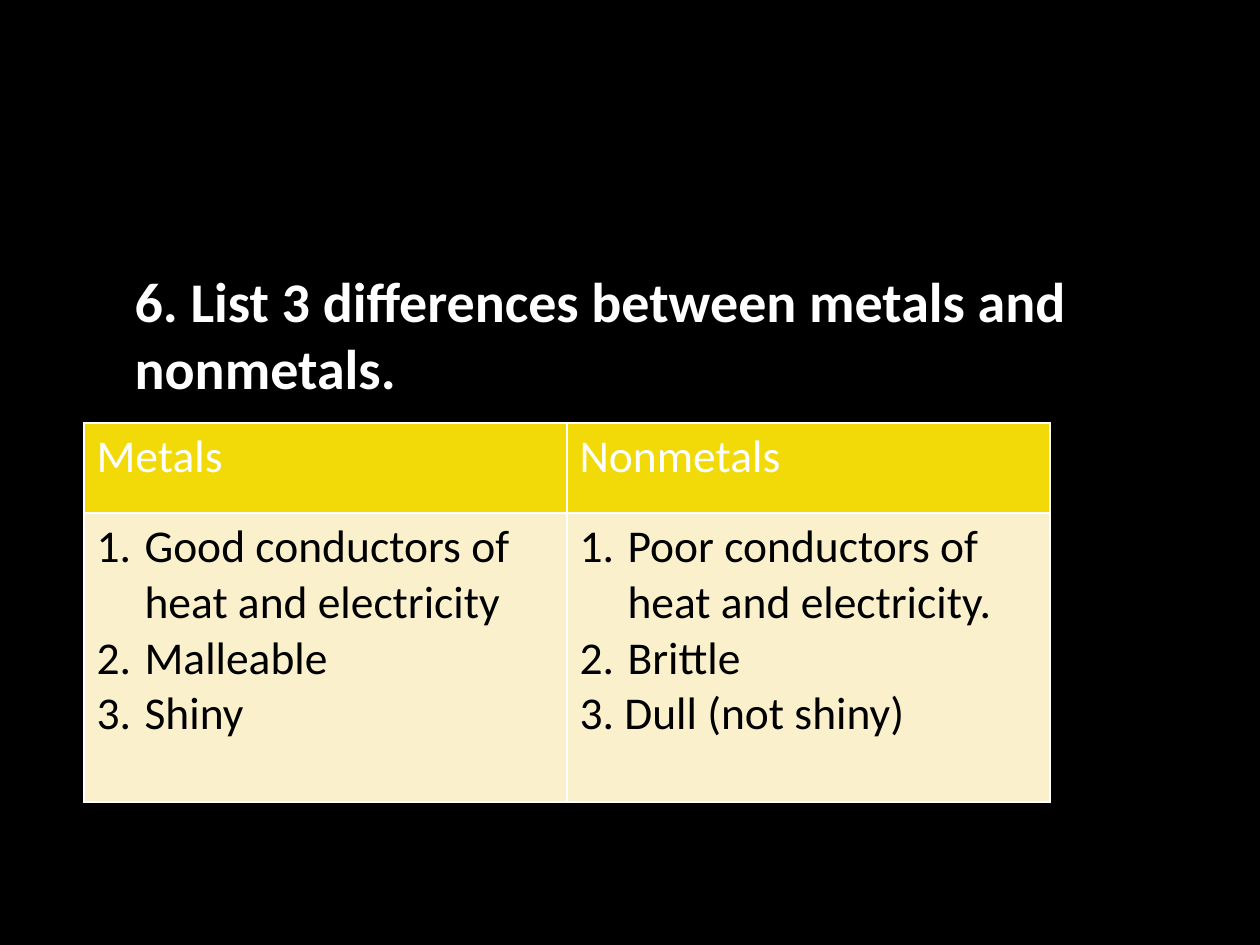
"""Build a slide comparing metals and nonmetals in a table."""
from pptx import Presentation
from pptx.dml.color import RGBColor
from pptx.enum.text import MSO_ANCHOR, MSO_AUTO_SIZE, PP_ALIGN
from pptx.oxml.ns import qn
from pptx.util import Pt
from lxml import etree

TOP, NO_FIT, LEFT = MSO_ANCHOR.TOP, MSO_AUTO_SIZE.NONE, PP_ALIGN.LEFT
PX = 914400 // 126
FONT = "Calibri"
WHITE, BLACK, YELLOW, CREAM = "FFFFFF", "000000", "F2D908", "FAF1CC"

TITLE = "6. List 3 differences between metals and nonmetals."
COLUMNS = [
    ("Metals",
     [("Good conductors of heat and electricity", True),
      ("Malleable", True),
      ("Shiny", True)]),
    ("Nonmetals",
     [("Poor conductors of heat and electricity.", True),
      ("Brittle", True),
      ("3. Dull (not shiny)", False)]),
]
TITLE_BOX = (107, 260, 1045, 544)
TABLE_BOX = (84, 423, 966, 379)
ROW_HEIGHTS = (90, 289)
TITLE_INDENT, LIST_INDENT = 15, 48


def px(n):
    return n * PX


def color(value):
    return RGBColor.from_string(value)


def style(p, size, value, bold=False):
    p.alignment = LEFT
    for r in p.runs:
        r.font.name = FONT
        r.font.size = Pt(size)
        r.font.bold = bold
        r.font.color.rgb = color(value)


def number(p):
    pPr = p._p.get_or_add_pPr()
    pPr.set("marL", str(px(LIST_INDENT)))
    pPr.set("indent", str(-px(LIST_INDENT)))
    etree.SubElement(pPr, qn("a:buFont"), typeface="+mj-lt")
    etree.SubElement(pPr, qn("a:buAutoNum"), type="arabicPeriod")


def border(cell, value):
    tcPr = cell._tc.get_or_add_tcPr()
    for i, side in enumerate(("lnL", "lnR", "lnT", "lnB")):
        ln = etree.Element(qn(f"a:{side}"), w=str(Pt(1)))
        fill = etree.SubElement(ln, qn("a:solidFill"))
        etree.SubElement(fill, qn("a:srgbClr"), val=value)
        tcPr.insert(i, ln)


def fill_cell(cell, items, text_color, back):
    cell.fill.solid()
    cell.fill.fore_color.rgb = color(back)
    border(cell, WHITE)
    tf = cell.text_frame
    tf.text = "\n".join(text for text, _ in items)
    for p, (_, numbered) in zip(tf.paragraphs, items):
        if numbered:
            number(p)
        style(p, 26, text_color)


def add_title(s):
    sp = s.shapes.title
    sp.left, sp.top, sp.width, sp.height = map(px, TITLE_BOX)
    tf = sp.text_frame
    tf.text = TITLE
    tf.word_wrap = True
    tf.auto_size = NO_FIT
    tf.vertical_anchor = TOP
    p = tf.paragraphs[0]
    p._p.get_or_add_pPr().set("marL", str(px(TITLE_INDENT)))
    style(p, 32, WHITE, True)


def add_comparison(s):
    box = map(px, TABLE_BOX)
    table = s.shapes.add_table(len(ROW_HEIGHTS), len(COLUMNS), *box).table
    for row, height in zip(table.rows, ROW_HEIGHTS):
        row.height = px(height)
    for c, (heading, items) in enumerate(COLUMNS):
        fill_cell(table.cell(0, c), [(heading, False)], WHITE, YELLOW)
        fill_cell(table.cell(1, c), items, BLACK, CREAM)


def main():
    prs = Presentation()
    prs.slide_width, prs.slide_height = px(1260), px(945)
    s = prs.slides.add_slide(prs.slide_layouts[5])
    s.background.fill.solid()
    s.background.fill.fore_color.rgb = color(BLACK)
    add_title(s)
    add_comparison(s)
    prs.save("out.pptx")


if __name__ == "__main__":
    main()
